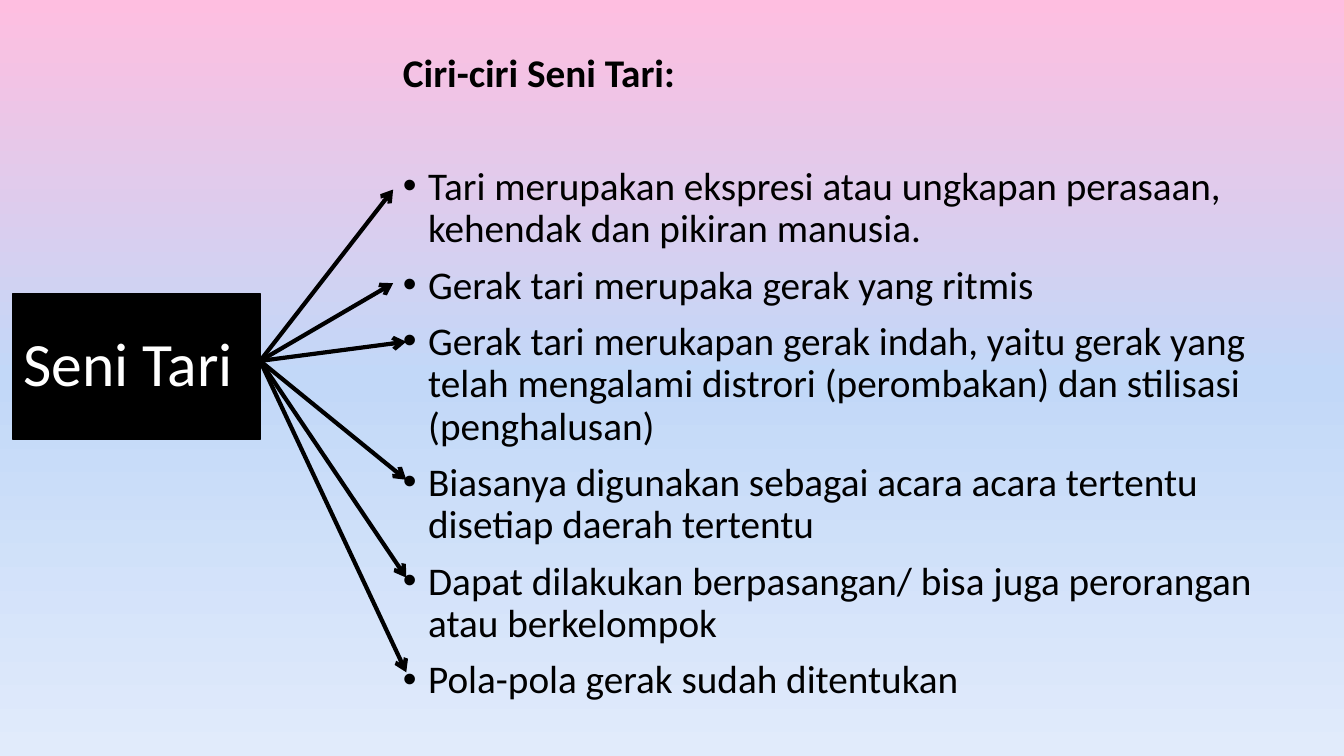
import copy

import pptx
import pptx.util
import pptx.dml.color
import pptx.enum.shapes
import pptx.enum.text
import pptx.oxml.ns
from lxml import etree

Pt = pptx.util.Pt
RGB = pptx.dml.color.RGBColor
qn = pptx.oxml.ns.qn

TOPIC = "Seni Tari"
HEADING = "Ciri-ciri Seni Tari:"
# Each trait with the point (x, y) where its arrow ends
TRAITS = [
    ("Tari merupakan ekspresi atau ungkapan perasaan, kehendak dan pikiran manusia.", (280.8, 135.4)),
    ("Gerak tari merupaka gerak yang ritmis", (280.8, 202.3)),
    ("Gerak tari merukapan gerak indah, yaitu gerak yang telah mengalami distrori "
     "(perombakan) dan stilisasi (penghalusan)", (290.2, 244.1)),
    ("Biasanya digunakan sebagai acara acara tertentu disetiap daerah tertentu", (290.2, 342.7)),
    ("Dapat dilakukan berpasangan/ bisa juga perorangan atau berkelompok", (290.2, 412.6)),
    ("Pola-pola gerak sudah ditentukan", (290.2, 480.2)),
]

BLACK = RGB(0, 0, 0)
WHITE = RGB(0xFF, 0xFF, 0xFF)
SKY = [(0, RGB(0xFE, 0xBE, 0xE0)), (0.5, RGB(0xC2, 0xD8, 0xF8)), (1, RGB(0xE1, 0xEB, 0xFB))]
FONT = "Calibri"
TOPIC_BOX = (9.4, 209.5, 176.4, 104.4)
LIST_BOX = (280.8, 34.6, 638.6, 495.4)
HUB = (185.8, 257.8)
INDENT = 18


def write(para, text, size=28, color=BLACK, bold=False, before=10, bullet=False):
    para.alignment = pptx.enum.text.PP_ALIGN.LEFT
    para.line_spacing = 0.9
    para.space_before = Pt(before)
    run = para.add_run()
    run.text = text
    font = run.font
    font.name, font.size, font.bold = FONT, Pt(size), bold
    font.color.rgb = color
    if bullet:
        props = para._p.get_or_add_pPr()
        props.set("marL", str(Pt(INDENT)))
        props.set("indent", str(-Pt(INDENT)))
        etree.SubElement(props, qn("a:buFont")).set("typeface", "Arial")
        etree.SubElement(props, qn("a:buChar")).set("char", "•")


def paint(slide):
    """Fill the background with the vertical gradient."""
    fill = slide.background.fill
    fill.gradient()
    fill.gradient_angle = 270
    first = slide.element.find(".//" + qn("a:gs"))
    first.addnext(copy.deepcopy(first))
    for stop, (place, color) in zip(fill.gradient_stops, SKY):
        stop.position = place
        stop.color.rgb = color


def arrow(slide, start, end):
    line = slide.shapes.add_connector(
        pptx.enum.shapes.MSO_CONNECTOR.STRAIGHT, *map(Pt, start + end))
    line.line.color.rgb = BLACK
    line.line.width = Pt(3)
    etree.SubElement(line.line._get_or_add_ln(), qn("a:tailEnd")).set("type", "arrow")
    etree.SubElement(line._element.spPr, qn("a:effectLst"))


def main():
    deck = pptx.Presentation()
    deck.slide_width, deck.slide_height = Pt(960), Pt(540)
    slide = deck.slides.add_slide(deck.slide_layouts[5])
    paint(slide)

    title = slide.shapes.title
    title.left, title.top, title.width, title.height = map(Pt, TOPIC_BOX)
    title.fill.solid()
    title.fill.fore_color.rgb = BLACK
    title.line.color.rgb = BLACK
    title.line.width = Pt(1)
    frame = title.text_frame
    frame.auto_size = pptx.enum.text.MSO_AUTO_SIZE.NONE
    frame.vertical_anchor = pptx.enum.text.MSO_ANCHOR.MIDDLE
    write(frame.paragraphs[0], TOPIC, size=44, color=WHITE, before=0)

    frame = slide.shapes.add_textbox(*map(Pt, LIST_BOX)).text_frame
    frame.word_wrap = True
    write(frame.paragraphs[0], HEADING, bold=True)
    for i, (trait, tip) in enumerate(TRAITS):
        write(frame.add_paragraph(), trait, before=10 if i else 50.5, bullet=True)
        arrow(slide, HUB, tip)

    deck.save("out.pptx")


if __name__ == "__main__":
    main()
